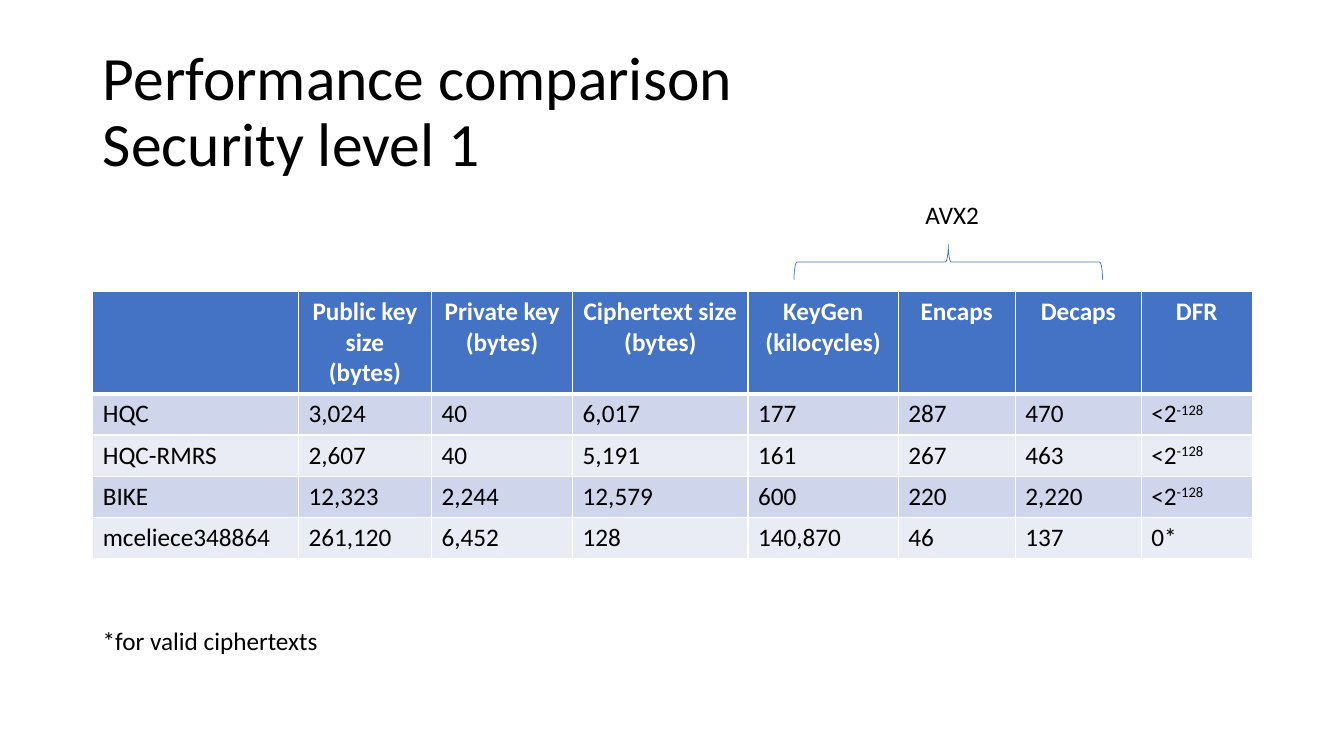
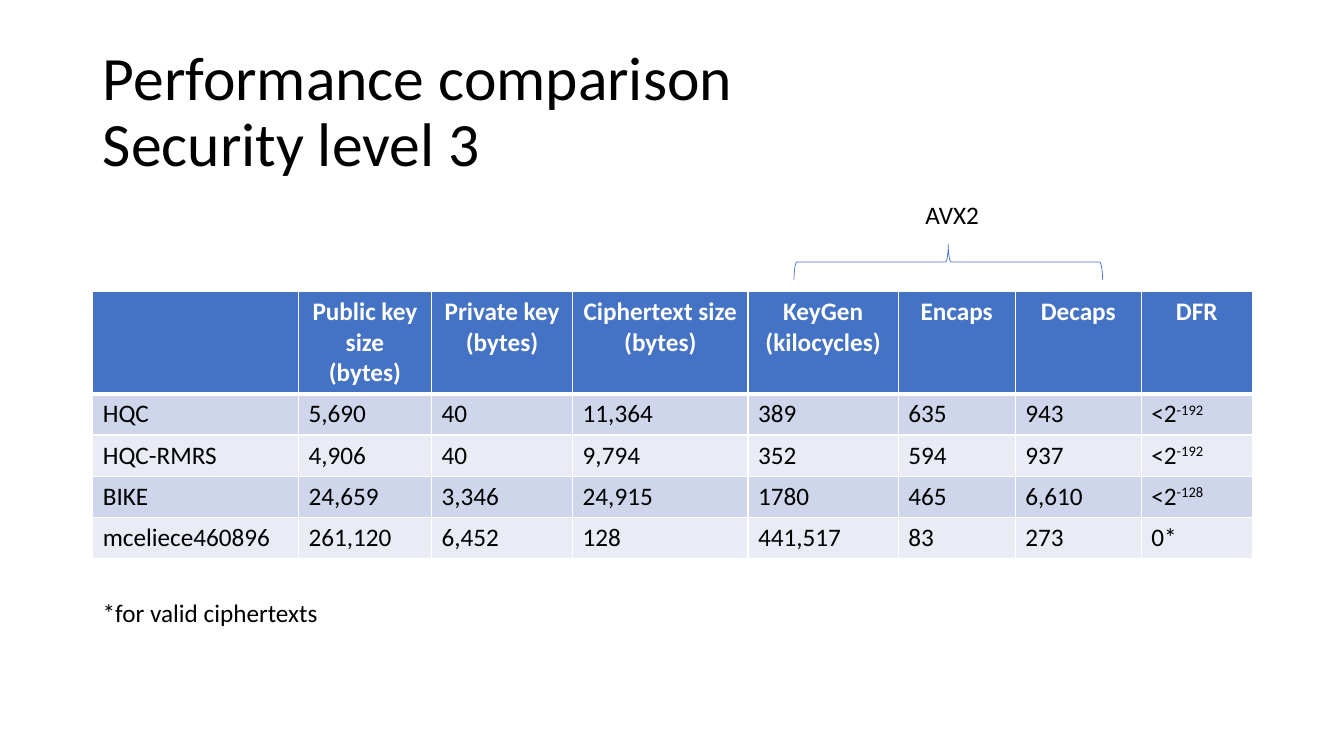
from dataclasses import dataclass

from lxml import etree
from pptx import Presentation
from pptx.dml.color import RGBColor as Color
from pptx.enum.shapes import MSO_SHAPE as Shape
from pptx.enum.text import MSO_ANCHOR as Anchor, MSO_AUTO_SIZE as AutoSize, PP_ALIGN as Align
from pptx.oxml.ns import qn
from pptx.util import Inches, Pt


@dataclass(frozen=True)
class Theme:
    font: str = "Calibri"
    ink: str = "000000"
    paper: str = "FFFFFF"
    accent: str = "4472C4"
    bands: tuple = ("CFD5EA", "E9EBF5")
    title_size: int = 44
    body_size: int = 18
    grid_line: float = 1
    header_line: float = 3
    brace_line: float = 0.5


LEFT, WIDTH = 0.92, 11.5
TABLE_TOP, HEADER_HEIGHT, ROW_HEIGHT = 2.89, 1.0, 0.41
COLUMNS = (2.04, 1.32, 1.4, 1.74, 1.49, 1.16, 1.25, 1.1)
HEADER = ("", "Public key size (bytes)", "Private key (bytes)", "Ciphertext size (bytes)",
          "KeyGen (kilocycles)", "Encaps", "Decaps", "DFR")
LEVELS = (
    ("1", 6.15, (
        ("HQC", "3,024", "40", "6,017", "177", "287", "470", "<2^-128"),
        ("HQC-RMRS", "2,607", "40", "5,191", "161", "267", "463", "<2^-128"),
        ("BIKE", "12,323", "2,244", "12,579", "600", "220", "2,220", "<2^-128"),
        ("mceliece348864", "261,120", "6,452", "128", "140,870", "46", "137", "0*"),
    )),
    ("3", 5.88, (
        ("HQC", "5,690", "40", "11,364", "389", "635", "943", "<2^-192"),
        ("HQC-RMRS", "4,906", "40", "9,794", "352", "594", "937", "<2^-192"),
        ("BIKE", "24,659", "3,346", "24,915", "1780", "465", "6,610", "<2^-128"),
        ("mceliece460896", "261,120", "6,452", "128", "441,517", "83", "273", "0*"),
    )),
)


def apply(target, values):
    for name, value in values.items():
        setattr(target, name, value)


class DeckBuilder:
    """Adds consistently styled pages and elements to a deck."""

    def __init__(self, theme):
        self.theme = theme
        self.deck = Presentation()
        apply(self.deck, {"slide_width": Inches(13.33), "slide_height": Inches(7.5)})
        self.page = None

    def style(self, span, size, color, bold=False):
        apply(span.font, {"name": self.theme.font, "size": Pt(size), "bold": bold})
        span.font.color.rgb = Color.from_string(color)

    def add_page(self, title):
        self.page = self.deck.slides.add_slide(self.deck.slide_layouts[5])
        box = self.page.shapes.title
        apply(box, {"left": Inches(LEFT), "top": Inches(0.4),
                    "width": Inches(WIDTH), "height": Inches(1.45)})
        frame = box.text_frame
        apply(frame, {"text": title, "word_wrap": True, "auto_size": AutoSize.NONE,
                      "vertical_anchor": Anchor.MIDDLE})
        para = frame.paragraphs[0]
        apply(para, {"alignment": Align.LEFT, "line_spacing": 0.9})
        for span in para.runs:
            self.style(span, self.theme.title_size, self.theme.ink)

    def add_label(self, text, left, top, width):
        box = self.page.shapes.add_textbox(Inches(left), Inches(top), Inches(width), Inches(0.4))
        apply(box.text_frame, {"word_wrap": True, "auto_size": AutoSize.SHAPE_TO_FIT_TEXT})
        span = box.text_frame.paragraphs[0].add_run()
        span.text = text
        self.style(span, self.theme.body_size, self.theme.ink)

    def add_brace(self, left, top, width, height):
        brace = self.page.shapes.add_shape(
            Shape.LEFT_BRACE, Inches(left), Inches(top), Inches(width), Inches(height))
        brace.rotation = 90
        brace.shadow.inherit = False
        brace.fill.background()
        brace.line.color.rgb = Color.from_string(self.theme.accent)
        brace.line.width = Pt(self.theme.brace_line)

    def set_borders(self, cell, top, bottom):
        side = self.theme.grid_line
        properties = cell._tc.get_or_add_tcPr()
        widths = {"a:lnL": side, "a:lnR": side, "a:lnT": top, "a:lnB": bottom}
        for position, (tag, width) in enumerate(widths.items()):
            line = etree.Element(qn(tag), w=str(Pt(width)))
            fill = etree.SubElement(line, qn("a:solidFill"))
            etree.SubElement(fill, qn("a:srgbClr"), val=self.theme.paper)
            properties.insert(position, line)

    def fill_cell(self, cell, text, row):
        theme = self.theme
        is_header = row == 0
        cell.fill.solid()
        cell.fill.fore_color.rgb = Color.from_string(
            theme.accent if is_header else theme.bands[(row - 1) % 2])
        self.set_borders(cell,
                         theme.header_line if row == 1 else theme.grid_line,
                         theme.header_line if is_header else theme.grid_line)
        para = cell.text_frame.paragraphs[0]
        para.alignment = Align.CENTER if is_header else Align.LEFT
        base, _, exponent = text.partition("^")
        for part, baseline in ((base, "0"), (exponent, "30000")):
            if part:
                span = para.add_run()
                span.text = part
                self.style(span, theme.body_size,
                           theme.paper if is_header else theme.ink, is_header)
                span._r.get_or_add_rPr().set("baseline", baseline)

    def add_table(self, rows):
        height = HEADER_HEIGHT + ROW_HEIGHT * (len(rows) - 1)
        table = self.page.shapes.add_table(
            len(rows), len(COLUMNS), Inches(LEFT), Inches(TABLE_TOP),
            Inches(WIDTH), Inches(height)).table
        table.horz_banding = False
        for column, width in zip(table.columns, COLUMNS):
            column.width = Inches(width)
        for row, texts in enumerate(rows):
            table.rows[row].height = Inches(ROW_HEIGHT if row else HEADER_HEIGHT)
            for column, text in enumerate(texts):
                self.fill_cell(table.cell(row, column), text, row)


def main():
    builder = DeckBuilder(Theme())
    for level, note_top, rows in LEVELS:
        builder.add_page(f"Performance comparison\vSecurity level {level}")
        builder.add_table((HEADER, *rows))
        builder.add_brace(9.23, 1.07, 0.35, 3.06)
        builder.add_label("AVX2", 9.08, 1.93, 0.82)
        builder.add_label("*for valid ciphertexts", LEFT, note_top, 2.4)
    builder.deck.save("out.pptx")


if __name__ == "__main__":
    main()
